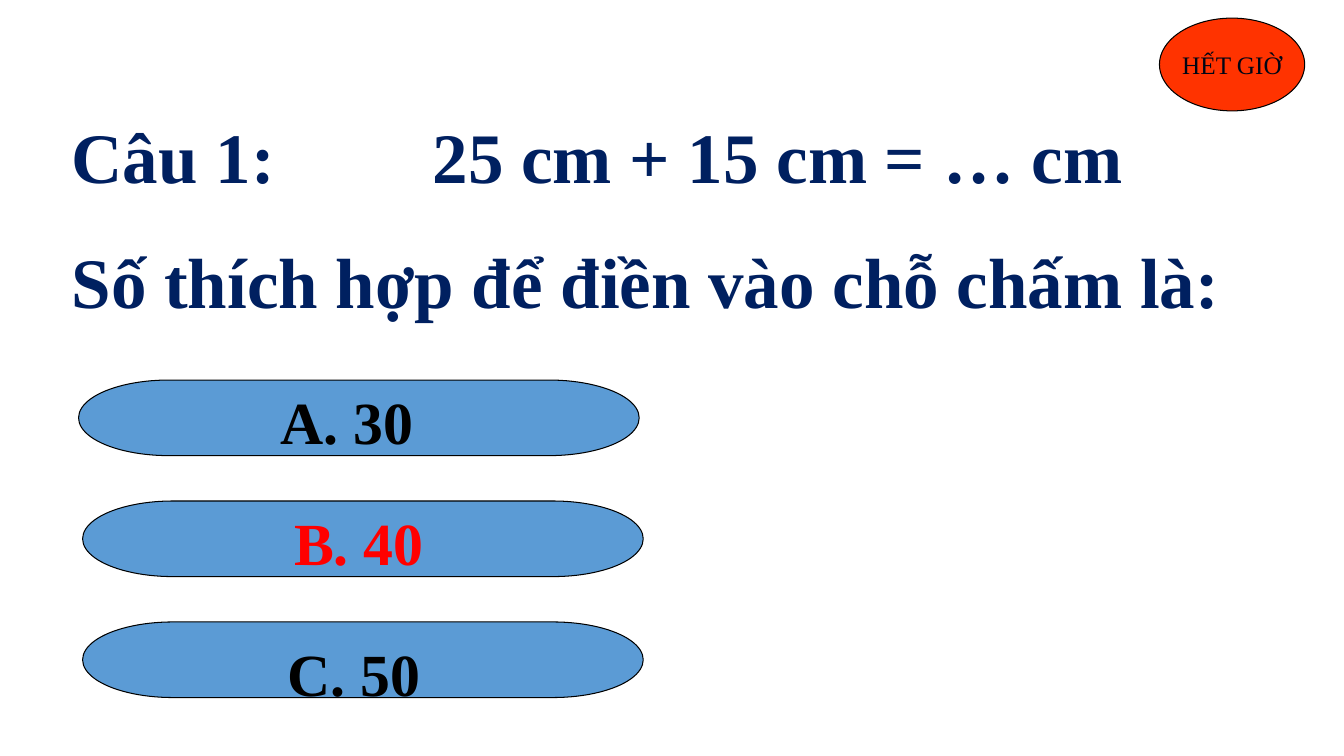
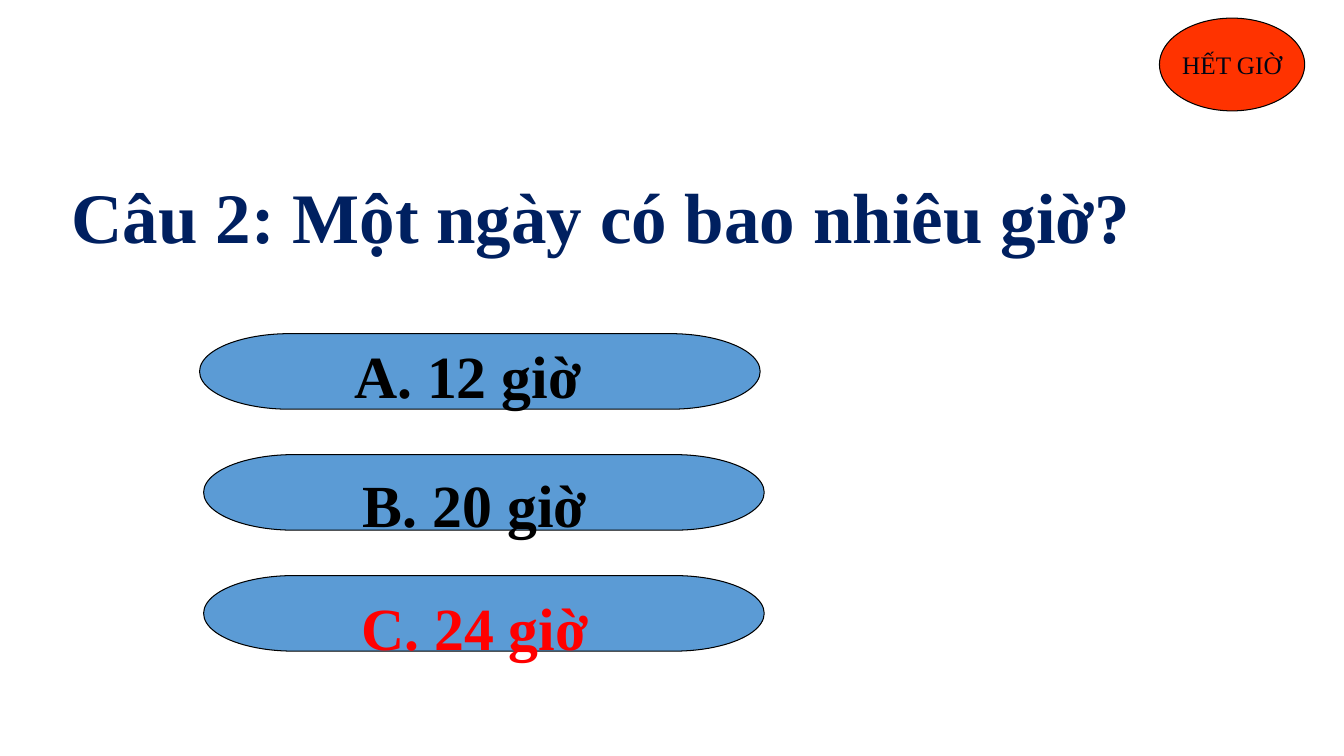
from lxml import etree
from pptx import Presentation
from pptx.dml.color import RGBColor
from pptx.enum.shapes import MSO_SHAPE
from pptx.enum.text import MSO_ANCHOR, MSO_AUTO_SIZE, PP_ALIGN
from pptx.oxml.ns import qn
from pptx.util import Inches, Pt

PILL, OVAL = MSO_SHAPE.FLOWCHART_TERMINATOR, MSO_SHAPE.OVAL
TOP, MIDDLE = MSO_ANCHOR.TOP, MSO_ANCHOR.MIDDLE
LEFT, CENTER = PP_ALIGN.LEFT, PP_ALIGN.CENTER
NO_AUTOFIT = MSO_AUTO_SIZE.NONE

COLORS = {
    "question": "002060",
    "answer": "000000",
    "correct": "FF0000",
    "pill": "5B9BD5",
    "outline": "000000",
    "timer": "FF3300",
    "timer_text": "000514",
}
FONTS = {
    "question": {"name": "Times New Roman", "size": Pt(50.7), "bold": True},
    "answer": {"name": "Times New Roman", "size": Pt(42.7), "bold": True},
    "timer": {"name": "Times New Roman", "size": Pt(18), "bold": False},
}
FRAME = {
    "auto_size": NO_AUTOFIT,
    "word_wrap": True,
    "vertical_anchor": TOP,
    "margin_left": Inches(0.1),
    "margin_right": Inches(0.1),
    "margin_top": Inches(0.13),
    "margin_bottom": Inches(0),
}
TIMER_FRAME = {"word_wrap": False, "vertical_anchor": MIDDLE}

PILL_WIDTH, PILL_HEIGHT, PILL_STEP = 5.56, 0.75, 1.2
FIRST_PILL_SHIFT = -0.04
LABEL_WIDTH, LABEL_HEIGHT = 4.44, 0.82
EXPRESSION_TAB = 3.58

QUIZ = [
    {
        "question": ["Câu 1:\t25 cm + 15 cm = … cm", "Số thích hợp để điền vào chỗ chấm là:"],
        "question_box": (0.61, 0.99, 12.33, 2.23),
        "pills_at": (0.82, 3.77),
        "answers": [("A. 30", 0.44, -0.08), ("B. 40", 0.52, -0.08), ("C. 50", 0.47, 0.02)],
        "correct": 1,
    },
    {
        "question": ["Câu 2: Một ngày có bao nhiêu giờ?"],
        "question_box": (0.61, 1.58, 12.33, 0.95),
        "pills_at": (2.02, 3.31),
        "answers": [("A. 12 giờ", 0.44, -0.08), ("B. 20 giờ", 0.47, 0), ("C. 24 giờ", 0.47, 0.02)],
        "correct": 2,
    },
]


def apply(target, values):
    """Set every attribute named in a dict of format values."""
    for name, value in values.items():
        setattr(target, name, value)


def write(frame, lines, font, color, align, layout):
    """Fill a text frame with one formatted paragraph per line."""
    apply(frame, layout)
    frame.text = "\n".join(lines)
    for paragraph in frame.paragraphs:
        paragraph.alignment = align
        apply(paragraph.font, FONTS[font])
        paragraph.font.color.rgb = RGBColor.from_string(COLORS[color])


def add_tab_stop(paragraph, position):
    """Give a paragraph one left tab stop."""
    stops = etree.SubElement(paragraph._p.get_or_add_pPr(), qn("a:tabLst"))
    etree.SubElement(stops, qn("a:tab"), pos=str(Inches(position)), algn="l")


def add_outlined(slide, kind, box, color):
    """Add a filled preset shape with a thin outline."""
    shape = slide.shapes.add_shape(kind, *map(Inches, box))
    shape.shadow.inherit = False
    shape.fill.solid()
    shape.fill.fore_color.rgb = RGBColor.from_string(COLORS[color])
    shape.line.color.rgb = RGBColor.from_string(COLORS["outline"])
    shape.line.width = Pt(0.75)
    return shape


def add_question(slide, lines, box):
    """Place the question in the title placeholder."""
    question = slide.shapes.title
    apply(question, dict(zip(("left", "top", "width", "height"), map(Inches, box))))
    write(question.text_frame, lines, "question", "question", LEFT, FRAME)
    for index, paragraph in enumerate(question.text_frame.paragraphs):
        paragraph.space_before = Pt(28 if index else 0)
        if "\t" in lines[index]:
            add_tab_stop(paragraph, EXPRESSION_TAB)


def add_answers(slide, answers, correct, pills_at):
    """Stack the answer pills with their labels."""
    for index, (answer, shift_x, shift_y) in enumerate(answers):
        left = pills_at[0] + (0 if index else FIRST_PILL_SHIFT)
        top = pills_at[1] + index * PILL_STEP
        add_outlined(slide, PILL, (left, top, PILL_WIDTH, PILL_HEIGHT), "pill")
        label_box = (left + shift_x, top + shift_y, LABEL_WIDTH, LABEL_HEIGHT)
        label = slide.shapes.add_textbox(*map(Inches, label_box))
        color = "correct" if index == correct else "answer"
        write(label.text_frame, [answer], "answer", color, CENTER, FRAME)


def add_timer(slide):
    """Add the time-up badge in the top right corner."""
    timer = add_outlined(slide, OVAL, (11.5, 0.18, 1.44, 0.92), "timer")
    write(timer.text_frame, ["HẾT GIỜ"], "timer", "timer_text", CENTER, TIMER_FRAME)


def main():
    """Build the quiz and save it."""
    deck = Presentation()
    deck.slide_width, deck.slide_height = Inches(13.33), Inches(7.5)
    title_only = deck.slide_layouts[5]
    for item in QUIZ:
        slide = deck.slides.add_slide(title_only)
        add_question(slide, item["question"], item["question_box"])
        add_answers(slide, item["answers"], item["correct"], item["pills_at"])
        add_timer(slide)
    deck.save("out.pptx")


if __name__ == "__main__":
    main()
